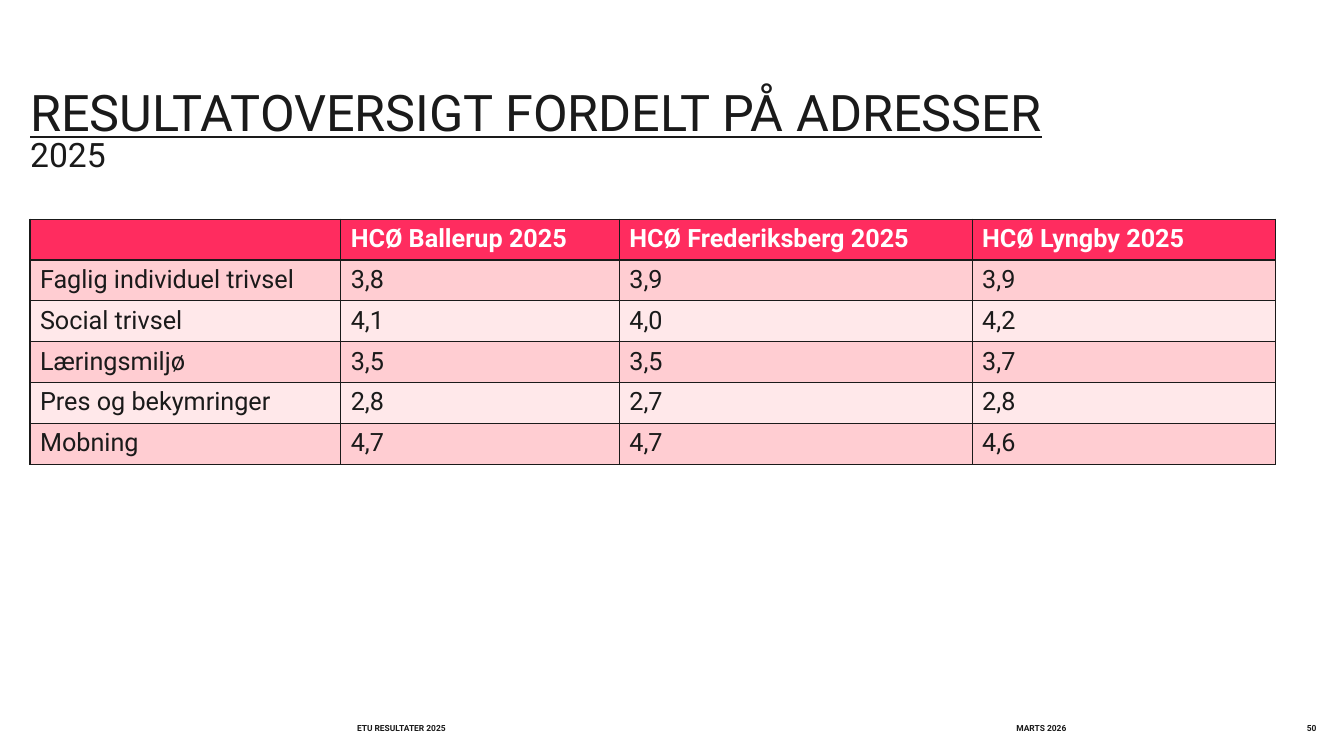
from lxml.etree import SubElement
from pptx import Presentation
from pptx.dml.color import RGBColor
from pptx.enum.text import MSO_ANCHOR, PP_ALIGN
from pptx.oxml.ns import qn
from pptx.util import Pt

FONT = "Roboto"
COLORS = {"ink": "1A1A1A", "white": "FFFFFF", "header": "FF2C5F",
          "odd": "FFCDD2", "even": "FFE8EA"}
COLUMN_WIDTHS = [222, 199, 252, 217]
ROW_HEIGHT = 29.2
RESULTS = [
    ["", "HCØ Ballerup 2025", "HCØ Frederiksberg 2025", "HCØ Lyngby 2025"],
    ["Faglig individuel trivsel", "3,8", "3,9", "3,9"],
    ["Social trivsel", "4,1", "4,0", "4,2"],
    ["Læringsmiljø", "3,5", "3,5", "3,7"],
    ["Pres og bekymringer", "2,8", "2,7", "2,8"],
    ["Mobning", "4,7", "4,7", "4,6"],
]


def style_font(font, size, color="ink", bold=False):
    """Give a font the slide's typeface with a size, colour and weight."""
    font.name = FONT
    font.size = Pt(size)
    font.bold = bold
    font.color.rgb = RGBColor.from_string(COLORS[color])


def add_text(slide, box, text):
    """Add a middle-anchored text box without margins and return its paragraph."""
    tf = slide.shapes.add_textbox(*map(Pt, box)).text_frame
    tf.word_wrap = True
    tf.vertical_anchor = MSO_ANCHOR.MIDDLE
    tf.margin_left = tf.margin_right = tf.margin_top = tf.margin_bottom = 0
    p = tf.paragraphs[0]
    p.text = text
    return p


def add_title(slide, box, heading, year):
    """Add the underlined heading with the year on the line below."""
    p = add_text(slide, box, f"{heading}\v{year}")
    p.line_spacing = 0.8
    for r, size, underline in zip(p.runs, (36, 24), (True, False)):
        style_font(r.font, size)
        r.font.underline = underline


def add_borders(cell):
    """Draw a thin dark line on all four sides of a cell."""
    tc_pr = cell._tc.get_or_add_tcPr()
    for side in ("lnL", "lnR", "lnT", "lnB"):
        ln = SubElement(tc_pr, qn(f"a:{side}"), w=str(Pt(1)))
        fill = SubElement(ln, qn("a:solidFill"))
        SubElement(fill, qn("a:srgbClr"), val=COLORS["ink"])


def add_results(slide, left, top):
    """Add the table of scores per address."""
    table = slide.shapes.add_table(
        len(RESULTS), len(COLUMN_WIDTHS), Pt(left), Pt(top),
        Pt(sum(COLUMN_WIDTHS)), Pt(ROW_HEIGHT * len(RESULTS))).table
    for column, width in zip(table.columns, COLUMN_WIDTHS):
        column.width = Pt(width)
    for i, values in enumerate(RESULTS):
        header = i == 0
        fill = "header" if header else "odd" if i % 2 else "even"
        for j, value in enumerate(values):
            cell = table.cell(i, j)
            add_borders(cell)
            cell.fill.solid()
            cell.fill.fore_color.rgb = RGBColor.from_string(COLORS[fill])
            cell.text = value
            style_font(cell.text_frame.paragraphs[0].font, 18,
                       "white" if header else "ink", header)
            for r in cell.text_frame.paragraphs[0].runs:
                style_font(r.font, 18, "white" if header else "ink", header)


def add_footer(slide, top, height):
    """Add the report name, date and page number along the bottom."""
    for left, width, text, align in (
            (255, 317.5, "ETU RESULTATER 2025", PP_ALIGN.LEFT),
            (726, 107, "MARTS 2026", PP_ALIGN.LEFT),
            (890, 50.4, "50", PP_ALIGN.RIGHT)):
        p = add_text(slide, (left, top, width, height), text)
        p.alignment = align
        style_font(p.runs[0].font, 6, bold=True)


def main():
    """Build and save the slide."""
    prs = Presentation()
    prs.slide_width, prs.slide_height = Pt(960), Pt(540)
    slide = prs.slides.add_slide(prs.slide_layouts[6])
    add_title(slide, (21.6, 28.8, 918.8, 133.2),
              "RESULTATOVERSIGT FORDELT PÅ ADRESSER", "2025")
    add_results(slide, 21.4, 156.5)
    add_footer(slide, 515, 10.8)
    prs.save("out.pptx")


if __name__ == "__main__":
    main()
